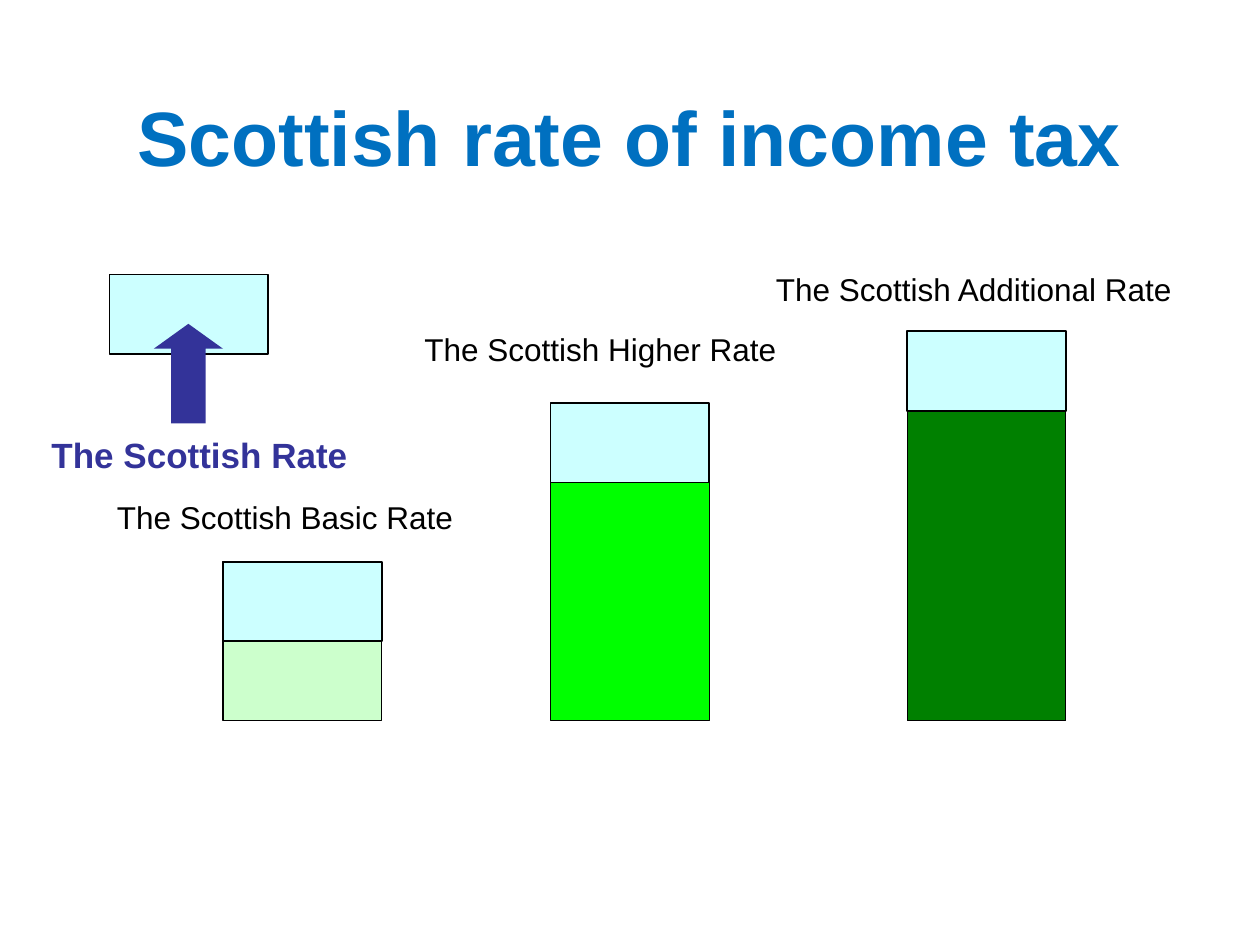
from dataclasses import dataclass

from pptx import Presentation
from pptx.dml.color import RGBColor
from pptx.enum.shapes import MSO_SHAPE as Shape
from pptx.enum.text import MSO_ANCHOR as Anchor, PP_ALIGN as Align
from pptx.shapes.autoshape import Shape as AutoShape
from pptx.slide import Slide
from pptx.util import Inches, Pt

WHITE = RGBColor(0xFF, 0xFF, 0xFF)
BLACK = RGBColor(0x00, 0x00, 0x00)
TITLE_BLUE = RGBColor(0x00, 0x70, 0xC0)
INDIGO = RGBColor(0x33, 0x33, 0x99)
PALE_CYAN = RGBColor(0xCC, 0xFF, 0xFF)
PALE_GREEN = RGBColor(0xCC, 0xFF, 0xCC)
BRIGHT_GREEN = RGBColor(0x00, 0xFF, 0x00)
DARK_GREEN = RGBColor(0x00, 0x80, 0x00)

FONT = "Arial"
BAR_WIDTH = 1.26
BASELINE = 5.72
RATE_HEIGHT = 0.63


@dataclass(frozen=True)
class Box:
    left: float
    top: float
    width: float
    height: float


@dataclass(frozen=True)
class TaxBand:
    label: str
    label_box: Box
    left: float
    bar_top: float
    rate_top: float
    color: RGBColor


BANDS = [
    TaxBand("The Scottish Basic Rate", Box(0.83, 3.9, 3.23, 0.4),
            1.77, 4.46, 4.46, PALE_GREEN),
    TaxBand("The Scottish Higher Rate", Box(3.27, 2.57, 3.47, 0.4),
            4.37, 3.2, 3.2, BRIGHT_GREEN),
    TaxBand("The Scottish Additional Rate", Box(6.06, 2.09, 3.55, 0.4),
            7.2, 2.65, 2.63, DARK_GREEN),
]


def add_filled(slide: Slide, kind: Shape, box: Box, fill: RGBColor,
               line_width: float = 0) -> AutoShape:
    shape = slide.shapes.add_shape(
        kind, Inches(box.left), Inches(box.top),
        Inches(box.width), Inches(box.height))
    shape.shadow.inherit = False
    shape.fill.solid()
    shape.fill.fore_color.rgb = fill
    if line_width:
        shape.line.color.rgb = BLACK
        shape.line.width = Pt(line_width)
    else:
        shape.line.fill.background()
    return shape


def add_rate(slide: Slide, left: float, top: float) -> None:
    box = Box(left, top, BAR_WIDTH, RATE_HEIGHT)
    add_filled(slide, Shape.RECTANGLE, box, PALE_CYAN, 1)


def add_text(slide: Slide, text: str, box: Box, size: float, color: RGBColor,
             bold: bool = False, align: Align = Align.LEFT,
             anchor: Anchor = Anchor.TOP) -> None:
    text_box = slide.shapes.add_textbox(
        Inches(box.left), Inches(box.top),
        Inches(box.width), Inches(box.height))
    text_frame = text_box.text_frame
    text_frame.word_wrap = True
    text_frame.vertical_anchor = anchor
    text_frame.text = text
    paragraph = text_frame.paragraphs[0]
    paragraph.alignment = align
    font = paragraph.runs[0].font
    font.name = FONT
    font.size = Pt(size)
    font.bold = bold
    font.color.rgb = color


def main() -> None:
    presentation = Presentation()
    presentation.slide_width = Inches(10)
    presentation.slide_height = Inches(7.5)
    slide = presentation.slides.add_slide(presentation.slide_layouts[6])
    slide.background.fill.solid()
    slide.background.fill.fore_color.rgb = WHITE

    add_text(slide, "Scottish rate of income tax", Box(0, 0.3, 10, 1.56),
             44, TITLE_BLUE, True, Align.CENTER, Anchor.MIDDLE)

    for band in BANDS:
        bar = Box(band.left, band.bar_top, BAR_WIDTH, BASELINE - band.bar_top)
        add_filled(slide, Shape.RECTANGLE, bar, band.color, 0.75)
        add_text(slide, band.label, band.label_box, 18, BLACK)
        add_rate(slide, band.left, band.rate_top)

    add_rate(slide, 0.87, 2.18)
    add_text(slide, "The Scottish Rate", Box(0.31, 3.39, 2.91, 0.43),
             20, INDIGO, True)
    arrow = add_filled(slide, Shape.UP_ARROW, Box(1.22, 2.57, 0.55, 0.79), INDIGO)
    arrow.adjustments[0] = 0.5
    arrow.adjustments[1] = 0.36

    presentation.save("out.pptx")


if __name__ == "__main__":
    main()
